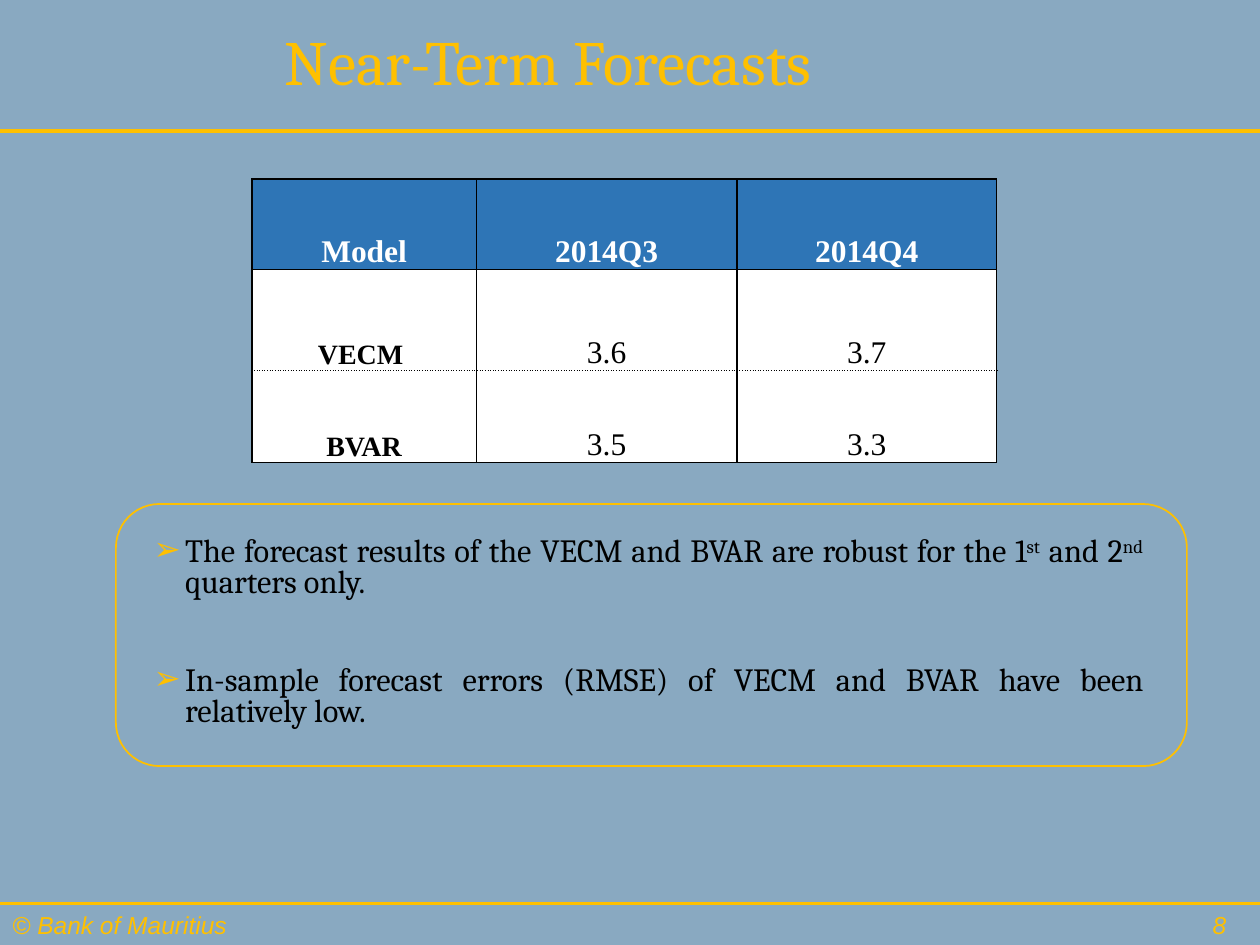
from lxml import etree
from pptx import Presentation
from pptx.dml.color import RGBColor
from pptx.enum.shapes import MSO_CONNECTOR, MSO_SHAPE
from pptx.enum.text import MSO_ANCHOR, PP_ALIGN
from pptx.oxml.ns import qn
from pptx.util import Inches, Pt

LEFT, MID, RIGHT, JUST = (PP_ALIGN.LEFT, PP_ALIGN.CENTER,
                          PP_ALIGN.RIGHT, PP_ALIGN.JUSTIFY)
TOP, CENTER, BOTTOM = MSO_ANCHOR.TOP, MSO_ANCHOR.MIDDLE, MSO_ANCHOR.BOTTOM

GOLD = RGBColor(0xFF, 0xC0, 0x00)
BACK = RGBColor(0x89, 0xA9, 0xC1)
BLUE = RGBColor(0x2E, 0x75, 0xB6)
WHITE = RGBColor(0xFF, 0xFF, 0xFF)
BLACK = RGBColor(0x00, 0x00, 0x00)

# Content
TITLE = "Near-Term Forecasts"
OWNER = "© Bank of Mauritius"
PAGE = "8"
ROWS = [
    ("Model", "2014Q3", "2014Q4"),
    ("VECM ", "3.6", "3.7"),
    ("BVAR", "3.5", "3.3"),
]
# Each point is a list of (text, raised) pieces
POINTS = [
    [("The forecast results of the VECM and BVAR are robust for the 1", False),
     ("st", True), (" and 2", False), ("nd", True),
     (" quarters only.", False)],
    [("In-sample forecast errors (RMSE) of VECM and BVAR have been "
      "relatively low.", False)],
]

# Layout in inches
WIDE, HIGH = 10, 7.5
HEAD, FOOT = 1.04, 7.17
COLS = (1.78, 2.07, 2.06)
TALL = (0.72, 0.8, 0.73)


def style(font, name, size, color, bold=False, italic=False):
    font.name, font.size = name, Pt(size)
    font.bold, font.italic = bold, italic
    font.color.rgb = color


def add_box(slide, area, anchor=TOP):
    frame = slide.shapes.add_textbox(*map(Inches, area)).text_frame
    frame.word_wrap = True
    frame.vertical_anchor = anchor
    return frame


def add_label(slide, text, area, align, anchor, *look, italic=False):
    para = add_box(slide, area, anchor).paragraphs[0]
    para.text = text
    para.alignment = align
    style(para.runs[0].font, *look, italic=italic)
    return para


def add_rule(slide, y):
    rule = slide.shapes.add_connector(
        MSO_CONNECTOR.STRAIGHT, 0, Inches(y), Inches(WIDE), Inches(y))
    rule.line.color.rgb = GOLD
    rule.line.width = Pt(1.75)
    etree.SubElement(rule._element.spPr, qn("a:effectLst"))


def add_edge(cell, side, dash):
    edge = etree.Element(qn("a:" + side), w=str(Pt(1)))
    fill = etree.SubElement(edge, qn("a:solidFill"))
    etree.SubElement(fill, qn("a:srgbClr"), val=str(BLACK))
    etree.SubElement(edge, qn("a:prstDash"), val=dash)
    return edge


def fill_cell(cell, text, row, col):
    head = row == 0
    cell.fill.solid()
    cell.fill.fore_color.rgb = BLUE if head else WHITE
    cell.vertical_anchor = BOTTOM
    cell.margin_left = cell.margin_right = Inches(0.07)
    cell.margin_top = cell.margin_bottom = 0
    para = cell.text_frame.paragraphs[0]
    para.text = text
    para.alignment = MID
    para.line_spacing = 1.15
    size = 16 if col == 0 and not head else 18
    style(para.runs[0].font, "Times New Roman", size,
          WHITE if head else BLACK, bold=head or col == 0)
    # Borders go before the fill; the rule between models is dotted
    dots = {(1, "lnB"), (2, "lnT")}
    for spot, side in enumerate(("lnL", "lnR", "lnT", "lnB")):
        dash = "sysDot" if (row, side) in dots else "solid"
        cell._tc.get_or_add_tcPr().insert(spot, add_edge(cell, side, dash))


def add_grid(slide):
    grid = slide.shapes.add_table(
        len(ROWS), len(COLS), Inches(2), Inches(1.42),
        Inches(sum(COLS)), Inches(sum(TALL))).table
    for col, width in zip(grid.columns, COLS):
        col.width = Inches(width)
    for row, height in zip(grid.rows, TALL):
        row.height = Inches(height)
    for r, texts in enumerate(ROWS):
        for c, text in enumerate(texts):
            fill_cell(grid.cell(r, c), text, r, c)


def add_points(slide):
    frame = add_box(slide, (1.12, 4.22, 8.05, 1.7))
    for i, parts in enumerate(POINTS):
        para = frame.add_paragraph() if i else frame.paragraphs[0]
        para.alignment = JUST
        para.line_spacing = 0.8
        if i:
            para.space_before = Pt(38)
        props = para._p.get_or_add_pPr()
        props.set("marL", str(Inches(0.25)))
        props.set("indent", str(-Inches(0.25)))
        tint = etree.SubElement(props, qn("a:buClr"))
        etree.SubElement(tint, qn("a:srgbClr"), val=str(GOLD))
        etree.SubElement(props, qn("a:buFont"), typeface="Arial")
        etree.SubElement(props, qn("a:buChar"), char="➢")
        for text, raised in parts:
            run = para.add_run()
            run.text = text
            style(run.font, "Cambria", 18.5, BLACK)
            if raised:
                run._r.get_or_add_rPr().set("baseline", "30000")


def main():
    deck = Presentation()
    deck.slide_width, deck.slide_height = Inches(WIDE), Inches(HIGH)
    slide = deck.slides.add_slide(deck.slide_layouts[6])
    slide.background.fill.solid()
    slide.background.fill.fore_color.rgb = BACK

    # Header and footer
    for y in (HEAD, FOOT):
        add_rule(slide, y)
    title = add_label(slide, TITLE, (0.04, 0, 8.62, HEAD), MID, CENTER,
                      "Cambria", 36, GOLD)
    title.line_spacing = 0.9
    add_label(slide, OWNER, (0, FOOT, 3.58, 0.34), LEFT, TOP,
              "Arial", 14, GOLD, italic=True)
    add_label(slide, PAGE, (7.58, FOOT, 2.25, 0.34), RIGHT, CENTER,
              "Arial", 14, GOLD, italic=True)

    # Forecast table, remarks and their frame
    add_grid(slide)
    add_points(slide)
    frame = slide.shapes.add_shape(
        MSO_SHAPE.ROUNDED_RECTANGLE, *map(Inches, (0.92, 4, 8.5, 2.08)))
    frame.shadow.inherit = False
    frame.fill.background()
    frame.line.color.rgb = GOLD
    frame.line.width = Pt(1)

    deck.save("out.pptx")


if __name__ == "__main__":
    main()
